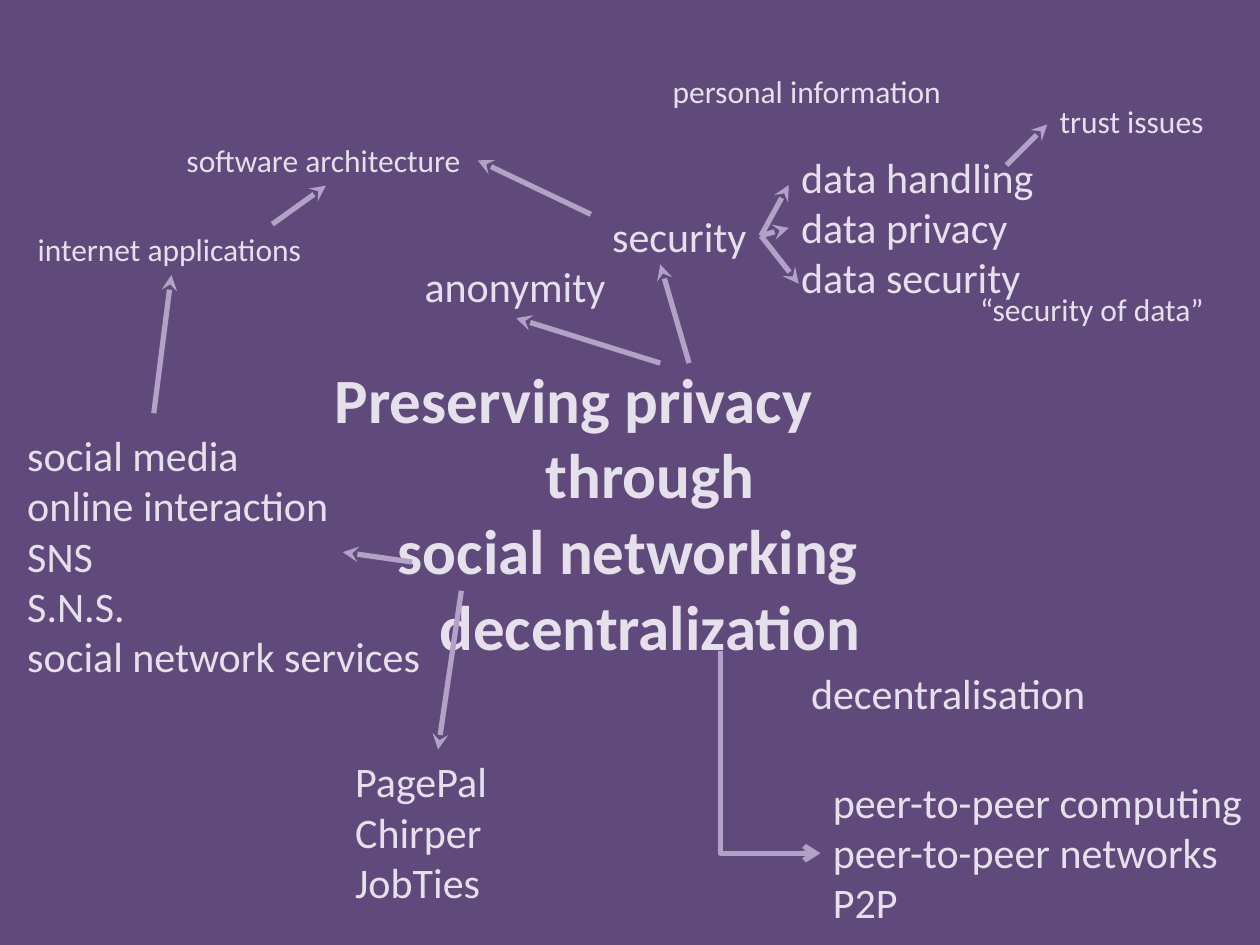
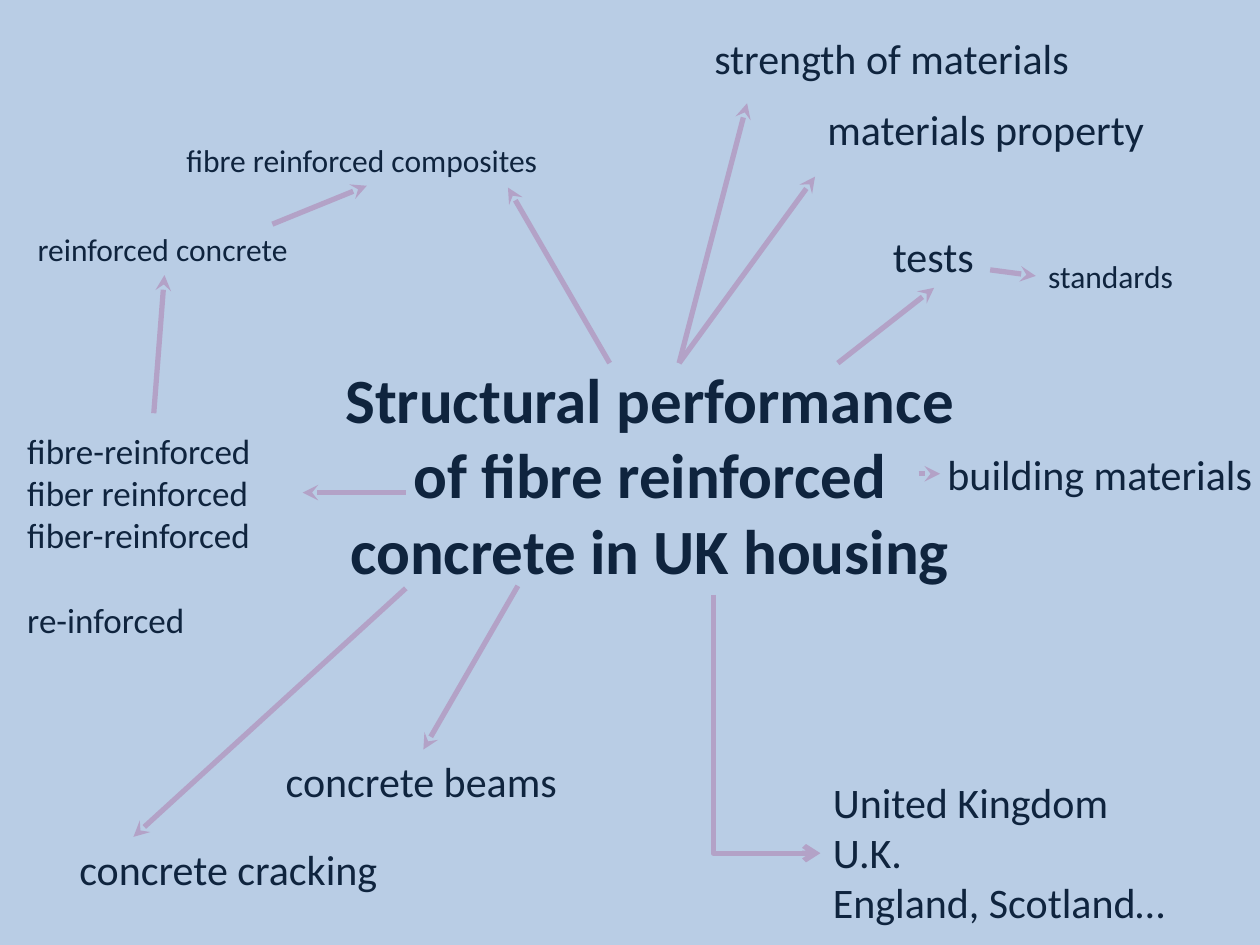
from dataclasses import dataclass

from lxml import etree
from pptx import Presentation
from pptx.dml.color import RGBColor
from pptx.enum.shapes import MSO_CONNECTOR
from pptx.enum.text import MSO_AUTO_SIZE, PP_ALIGN
from pptx.oxml.ns import qn
from pptx.util import Cm, Pt

STRAIGHT, ELBOW = MSO_CONNECTOR.STRAIGHT, MSO_CONNECTOR.ELBOW
FIT_SHAPE = MSO_AUTO_SIZE.SHAPE_TO_FIT_TEXT
LEFT_ALIGN, CENTER = PP_ALIGN.LEFT, PP_ALIGN.CENTER
TOP, LEFT, BOTTOM, RIGHT = range(4)  # connection sites of a rectangle
TAB_STEP = Cm(2.54)


@dataclass(frozen=True)
class Theme:
    background: str
    text: str
    arrow: str = "B3A2C7"
    font: str = "Calibri"
    title_size: int = 36
    term_size: int = 24
    variant_size: int = 20
    detail_size: int = 18
    arrow_width: int = 3


PURPLE = Theme(background="604A7B", text="E6E0EC")
BLUE = Theme(background="B9CDE5", text="0F243E")


def write_text(frame, text, theme, size, bold=False, align=LEFT_ALIGN):
    """Fill a text frame, one paragraph a line, in a single format."""
    frame.text = text
    for paragraph in frame.paragraphs:
        paragraph.alignment = align
        paragraph._p.get_or_add_pPr().set("defTabSz", str(int(TAB_STEP)))
        for run in paragraph.runs:
            run.font.name = theme.font
            run.font.size = Pt(size)
            run.font.bold = bold
            run.font.color.rgb = RGBColor.from_string(theme.text)


class MindMap:
    """One slide of terms and arrows around a central title."""

    def __init__(self, presentation, theme):
        self.theme = theme
        self.slide = presentation.slides.add_slide(presentation.slide_layouts[6])
        fill = self.slide.background.fill
        fill.solid()
        fill.fore_color.rgb = RGBColor.from_string(theme.background)

    def text_box(self, text, left, top, width, size, lines, wrap=False, **style):
        height = Pt(lines * size * 1.22) + Cm(0.25)
        box = self.slide.shapes.add_textbox(Cm(left), Cm(top), Cm(width), height)
        frame = box.text_frame
        frame.word_wrap = wrap
        frame.auto_size = FIT_SHAPE
        write_text(frame, text, self.theme, size, **style)
        return box

    def title(self, text, lines):
        return self.text_box(text, 6.1, 7.14, 14, self.theme.title_size, lines,
                             wrap=True, bold=True, align=CENTER)

    def term(self, text, left, top, width):
        return self.text_box(text, left, top, width, self.theme.term_size,
                             text.count("\n") + 1)

    def detail(self, text, left, top, width):
        return self.text_box(text, left, top, width, self.theme.detail_size, 1)

    def variants(self, text, left, top, width):
        """Spelling variants; the last one stands a line apart."""
        size = self.theme.variant_size
        box = self.text_box(text, left, top, width, size, text.count("\n") + 2)
        box.text_frame.paragraphs[-1].space_before = Pt(size * 1.22)
        return box

    def style_arrow(self, connector, head):
        connector.line.color.rgb = RGBColor.from_string(self.theme.arrow)
        connector.line.width = Pt(self.theme.arrow_width)
        properties = connector._element.spPr
        etree.SubElement(properties.find(qn("a:ln")), qn("a:tailEnd"), type=head)
        etree.SubElement(properties, qn("a:effectLst"))

    def arrow(self, start, end):
        """Straight arrow; each end is an (x, y) point or a (box, side) pair."""
        connector = self.slide.shapes.add_connector(STRAIGHT, 0, 0, 0, 0)
        if isinstance(start[0], (int, float)):
            connector.begin_x, connector.begin_y = map(Cm, start)
        else:
            connector.begin_connect(*start)
        if isinstance(end[0], (int, float)):
            connector.end_x, connector.end_y = map(Cm, end)
        else:
            connector.end_connect(*end)
        self.style_arrow(connector, "stealth")

    def corner_arrow(self, start, end):
        """Arrow that runs down, then right: a quarter-turned, flipped elbow."""
        (x1, y1), (x2, y2) = start, end
        middle_x, middle_y = (x1 + x2) / 2, (y1 + y2) / 2
        across, down = (x2 - x1) / 2, (y2 - y1) / 2
        connector = self.slide.shapes.add_connector(
            ELBOW, Cm(middle_x + down), Cm(middle_y - across),
            Cm(middle_x - down), Cm(middle_y + across))
        properties = connector._element.spPr
        properties.find(qn("a:xfrm")).set("rot", str(270 * 60000))
        properties.find(qn("a:prstGeom")).set("prst", "bentConnector2")
        self.style_arrow(connector, "arrow")


def build_privacy_map(presentation):
    page = MindMap(presentation, PURPLE)
    page.title("Preserving privacy\t\t through\vsocial networking \tdecentralization", 4)

    # Terms
    page.term("decentralisation", 16.1, 13.34, 6.1)
    security = page.term("security", 12.09, 4.11, 3.25)
    anonymity = page.term("anonymity", 8.31, 5.13, 4.19)
    page.term("social media\nonline interaction\nSNS\nS.N.S.\nsocial network services",
              0.3, 8.53, 8.51)
    page.term("peer-to-peer computing\npeer-to-peer networks\nP2P", 16.54, 15.52, 8.86)
    data = page.term("data handling\ndata privacy\ndata security", 15.9, 2.92, 5.23)
    networks = page.term("PagePal\nChirper\nJobTies", 6.91, 15.11, 3.84)

    # Details
    page.detail("personal information", 13.31, 1.32, 5.99)
    page.detail("“security of data”", 19.51, 5.72, 5.05)
    page.detail("trust issues", 21.11, 1.93, 3.45)
    internet = page.detail("internet applications", 0.51, 4.52, 5.89)
    software = page.detail("software architecture", 3.51, 2.72, 6.12)

    # Arrows
    for start, end in [
        ((13.31, 7.32), (anonymity, BOTTOM)),
        ((13.89, 7.32), (13.31, 5.33)),
        ((security, RIGHT), (16.1, 5.72)),
        ((security, RIGHT), (data, LEFT)),
        ((security, RIGHT), (15.9, 3.73)),
        ((20.29, 3.33), (21.11, 2.51)),
        ((8.31, 11.33), (6.91, 11.13)),
        ((9.3, 11.91), (networks, TOP)),
        ((3.1, 8.33), (internet, BOTTOM)),
        ((5.49, 4.52), (software, BOTTOM)),
        ((11.91, 4.32), (software, RIGHT)),
    ]:
        page.arrow(start, end)
    page.corner_arrow((14.53, 13.13), (16.54, 17.2))


def build_concrete_map(presentation):
    page = MindMap(presentation, BLUE)
    page.title("Structural performance of fibre reinforced concrete in UK housing", 3)

    # Terms
    page.term("materials property", 16.43, 1.96, 6.96)
    page.term("strength of materials", 14.15, 0.53, 7.72)
    page.variants("fibre-reinforced\nfiber reinforced\nfiber-reinforced\nre-inforced",
                  0.3, 8.53, 5.08)
    page.term("United Kingdom\nU.K.\nEngland, Scotland…", 16.54, 15.52, 7.32)
    beams = page.term("concrete beams", 5.51, 15.11, 6.05)
    page.term("building materials", 18.85, 8.92, 6.71)
    page.term("concrete cracking", 1.35, 16.87, 6.58)
    tests = page.term("tests", 17.75, 4.52, 2.16)

    # Details
    reinforced = page.detail("reinforced concrete", 0.51, 4.52, 5.61)
    composites = page.detail("fibre reinforced composites", 3.51, 2.72, 7.77)
    standards = page.detail("standards", 20.88, 5.05, 3.05)

    # Arrows
    for start, end in [
        ((18.52, 9.55), (18.95, 9.55)),
        ((13.69, 7.32), (16.43, 3.56)),
        ((13.69, 7.32), (15.06, 2.08)),
        ((16.89, 7.32), (tests, BOTTOM)),
        ((8.18, 11.86), (2.69, 16.87)),
        ((8.18, 9.93), (6.1, 9.93)),
        ((10.44, 11.81), (beams, TOP)),
        ((3.1, 8.33), (reinforced, BOTTOM)),
        ((5.49, 4.52), (composites, BOTTOM)),
        ((12.29, 7.32), (10.24, 3.78)),
        ((19.96, 5.44), (standards, LEFT)),
    ]:
        page.arrow(start, end)
    page.corner_arrow((14.38, 11.99), (16.54, 17.2))


def main():
    presentation = Presentation()
    presentation.slide_width, presentation.slide_height = Cm(25.4), Cm(19.05)
    build_privacy_map(presentation)
    build_concrete_map(presentation)
    presentation.save("out.pptx")


if __name__ == "__main__":
    main()
